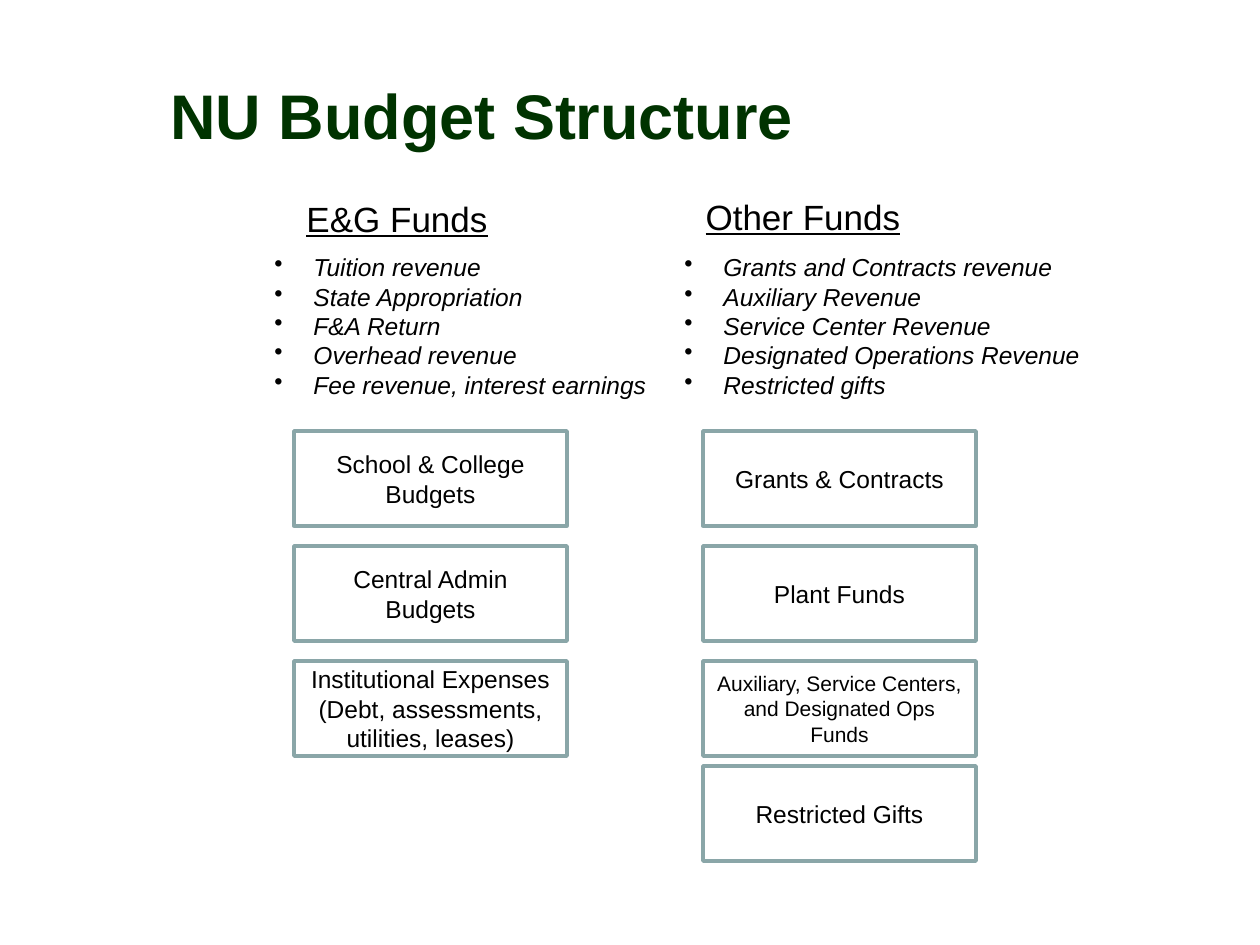
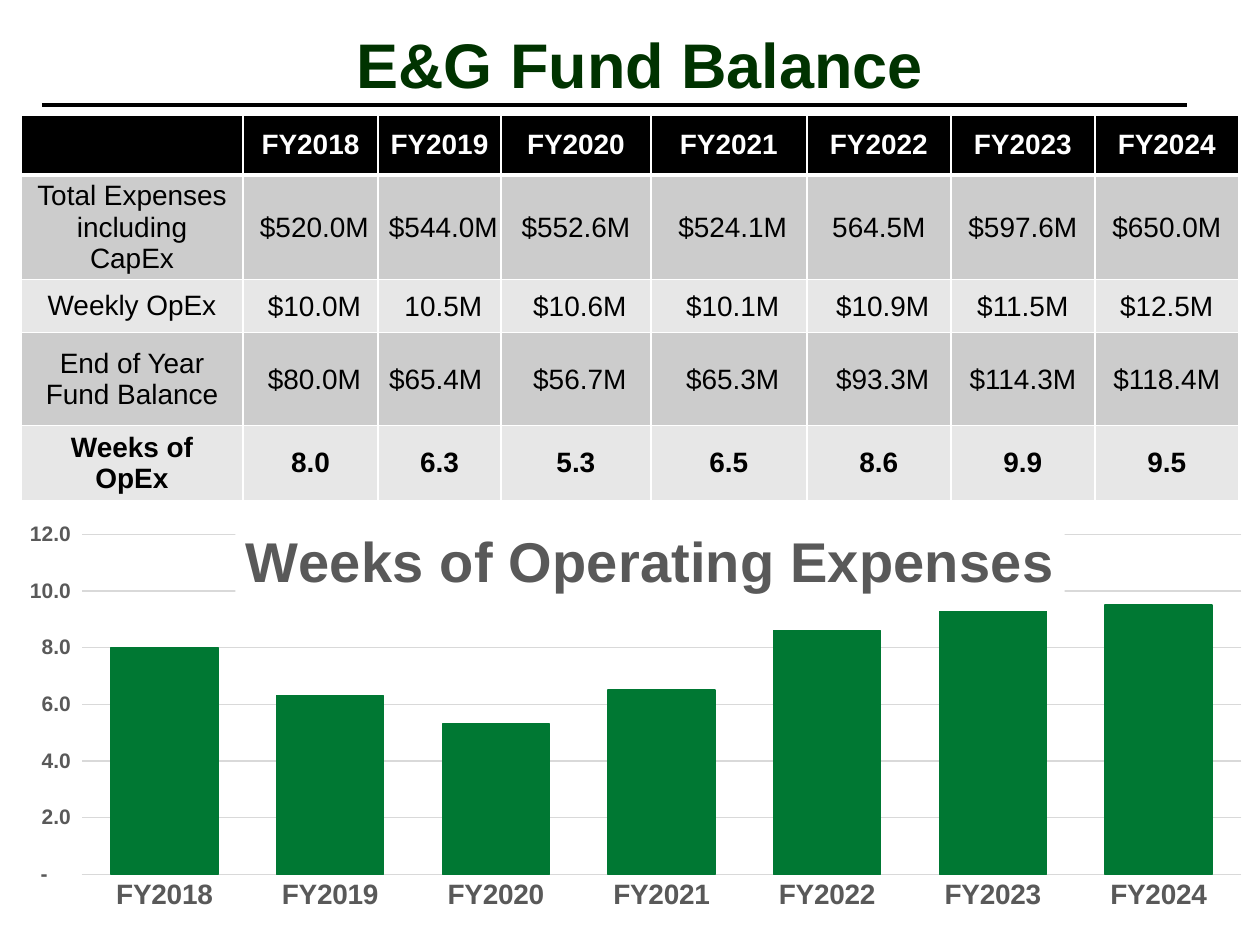
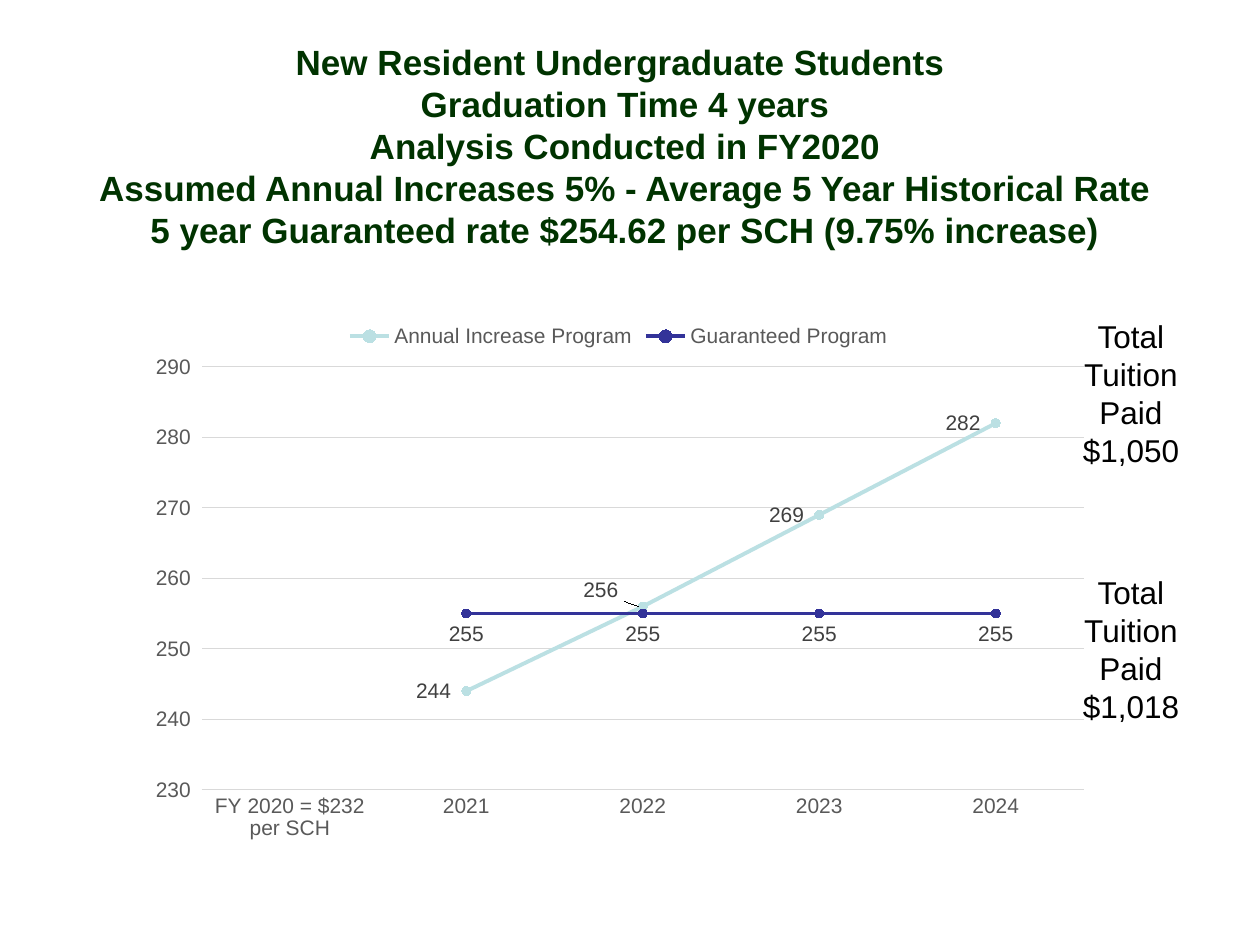
import lxml.etree
import pptx
import pptx.chart.data
import pptx.dml.color
import pptx.enum.chart
import pptx.enum.shapes
import pptx.enum.text
import pptx.oxml.ns
import pptx.util

FONT = "Arial"
BLACK, WHITE, GREEN, BOX_EDGE = "000000", "FFFFFF", "003300", "8AA6A8"
AXIS_TEXT, GRID, BAR, LABEL_TEXT = "595959", "D9D9D9", "007833", "404040"
CENTER = pptx.enum.text.PP_ALIGN.CENTER
LEFT = pptx.enum.text.PP_ALIGN.LEFT
MIDDLE = pptx.enum.text.MSO_ANCHOR.MIDDLE
LABEL_POSITION = pptx.enum.chart.XL_LABEL_POSITION

FUND_GROUPS = [
    {"name": "E&G Funds", "name_at": (293, 191, 208, 55), "sources_at": (262, 246, 399, 161),
     "sources": ["Tuition revenue", "State Appropriation", "F&A Return", "Overhead revenue",
                 "Fee revenue, interest earnings"],
     "left": 294,
     "budgets": [(["School & College Budgets"], 14), (["Central Admin", "Budgets"], 14),
                 (["Institutional Expenses", "(Debt, assessments, utilities, leases)"], 14)]},
    {"name": "Other Funds", "name_at": (692, 189, 222, 55), "sources_at": (672, 246, 423, 161),
     "sources": ["Grants and Contracts revenue", "Auxiliary Revenue", "Service Center Revenue",
                 "Designated Operations Revenue", "Restricted gifts"],
     "left": 703,
     "budgets": [(["Grants & Contracts"], 14), (["Plant Funds"], 14),
                 (["Auxiliary, Service Centers, and Designated Ops Funds"], 12),
                 (["Restricted Gifts"], 14)]},
]
BUDGET_TOPS = (431, 546, 661, 766)
BUDGET_SIZE = (273, 95)

YEARS = ["FY2018", "FY2019", "FY2020", "FY2021", "FY2022", "FY2023", "FY2024"]
WEEKS = [8.0, 6.3, 5.3, 6.5, 8.6, 9.9, 9.5]
BALANCE_ROWS = [
    [""] + YEARS,
    ["Total Expenses\nincluding CapEx", " $520.0M", " $544.0M ", " $552.6M ", " $524.1M",
     " 564.5M ", "$597.6M", "$650.0M"],
    ["Weekly OpEx", " $10.0M", " 10.5M", " $10.6M", " $10.1M", " $10.9M", "$11.5M", "$12.5M"],
    ["End of Year Fund Balance", " $80.0M", "$65.4M ", " $56.7M", " $65.3M", " $93.3M",
     "$114.3M", "$118.4M"],
    ["Weeks of OpEx"] + [f"{weeks:.1f}" for weeks in WEEKS],
]
ROW_FILLS = [BLACK, "CCCCCC", "E7E7E7", "CCCCCC", "E7E7E7"]
COLUMN_WIDTHS = (222, 135, 123, 150, 156, 144, 144, 144)
ROW_HEIGHTS = (60, 104, 53, 93, 75)
WEEKS_FORMAT = '_(* #,##0.0_);_(* \\(#,##0.0\\);_(* "-"??_);_(@_)'

TUITION_TITLE = [
    "New Resident Undergraduate Students ",
    "Graduation Time 4 years",
    "Analysis Conducted in FY2020",
    "Assumed Annual Increases 5% - Average 5 Year Historical Rate",
    "5 year Guaranteed rate $254.62 per SCH (9.75% increase)",
]
TUITION_YEARS = ["FY 2020 = $232 per SCH", "2021", "2022", "2023", "2024"]
PROGRAMS = [
    ("Annual Increase Program", [None, 244, 256, 269, 282], "BBE0E3", LABEL_POSITION.LEFT),
    ("Guaranteed Program", [None, 255, 255, 255, 255], "333399", LABEL_POSITION.BELOW),
]
TUITION_FORMAT = '_(* #,##0_);_(* \\(#,##0\\);_(* "-"_);_(@_)'
TOTALS = [("$1,050", 311), ("$1,018", 567)]
LABEL_EXTENSION = "{CE6537A1-D6FC-4f65-9D91-7224C49458BB}"
LABEL_NAMESPACE = "http://schemas.microsoft.com/office/drawing/2012/chart"


def px(length):
    return pptx.util.Emu(round(length * 914400 / 126))


def box(at):
    return [px(length) for length in at]


def rgb(value):
    return pptx.dml.color.RGBColor.from_string(value)


def add_xml(parent, tag, **attributes):
    return lxml.etree.SubElement(parent, pptx.oxml.ns.qn(tag), attributes)


def set_font(font, size, color, bold=False):
    font.name = FONT
    font.size = pptx.util.Pt(size)
    font.bold = bold
    font.color.rgb = rgb(color)


def set_line(line, color, width):
    line.color.rgb = rgb(color)
    line.width = pptx.util.Pt(width)


def write(frame, lines, size, color=BLACK, bold=False, align=CENTER):
    frame.text = "\n".join(lines)
    for paragraph in frame.paragraphs:
        paragraph.alignment = align
        set_font(paragraph.font, size, color, bold)


def add_text(slide, at, lines, size, wrap=True, **style):
    frame = slide.shapes.add_textbox(*box(at)).text_frame
    write(frame, lines, size, **style)
    frame.word_wrap = wrap
    frame.auto_size = pptx.enum.text.MSO_AUTO_SIZE.SHAPE_TO_FIT_TEXT
    return frame


def add_title(slide, at, lines, size=36, align=CENTER):
    frame = add_text(slide, at, lines, size, color=GREEN, bold=True, align=align)
    frame.auto_size = pptx.enum.text.MSO_AUTO_SIZE.NONE
    frame.vertical_anchor = MIDDLE


def add_sources(slide, at, sources):
    frame = add_text(slide, at, sources, 14, wrap=False, align=LEFT)
    for paragraph in frame.paragraphs:
        paragraph.font.italic = True
        properties = paragraph._p.get_or_add_pPr()
        properties.set("marL", str(px(39)))
        properties.set("indent", str(-px(39)))
        bullet = lxml.etree.Element(pptx.oxml.ns.qn("a:buChar"), char="•")
        properties.insert(0, bullet)


def add_budget(slide, at, lines, size):
    budget = slide.shapes.add_shape(pptx.enum.shapes.MSO_SHAPE.RECTANGLE, *box(at))
    budget.shadow.inherit = False
    budget.fill.background()
    set_line(budget.line, BOX_EDGE, 2)
    write(budget.text_frame, lines, size)
    budget.text_frame.word_wrap = True
    budget.text_frame.vertical_anchor = MIDDLE


def set_borders(cell, bottom):
    properties = cell._tc.get_or_add_tcPr()
    for tag, width in (("a:lnL", 1), ("a:lnR", 1), ("a:lnT", 1), ("a:lnB", bottom)):
        border = add_xml(properties, tag, w=str(pptx.util.Pt(width)))
        add_xml(add_xml(border, "a:solidFill"), "a:srgbClr", val=WHITE)


def add_balance_table(slide):
    at = (21, 115, sum(COLUMN_WIDTHS), sum(ROW_HEIGHTS))
    table = slide.shapes.add_table(len(BALANCE_ROWS), len(COLUMN_WIDTHS), *box(at)).table
    for column, width in zip(table.columns, COLUMN_WIDTHS):
        column.width = px(width)
    last = len(BALANCE_ROWS) - 1
    for r, texts in enumerate(BALANCE_ROWS):
        table.rows[r].height = px(ROW_HEIGHTS[r])
        for c, text in enumerate(texts):
            cell = table.cell(r, c)
            write(cell.text_frame, text.split("\n"), 16,
                  color=BLACK if r else WHITE, bold=r in (0, last))
            cell.vertical_anchor = MIDDLE
            if c == 0:
                cell.margin_top = cell.margin_bottom = px(2)
            elif 0 < r < last:
                cell.margin_left = cell.margin_right = cell.margin_top = px(1)
                cell.margin_bottom = 0
            set_borders(cell, bottom=1 if r else 3)
            cell.fill.solid()
            cell.fill.fore_color.rgb = rgb(ROW_FILLS[r])


def set_layout(parent, index, modes, **fractions):
    for old in parent.findall(pptx.oxml.ns.qn("c:layout")):
        parent.remove(old)
    layout = lxml.etree.Element(pptx.oxml.ns.qn("c:layout"))
    manual = add_xml(layout, "c:manualLayout")
    for tag, value in (modes | fractions).items():
        add_xml(manual, f"c:{tag}", val=str(value))
    parent.insert(index, layout)


def hide_leader_lines(labels):
    extension = add_xml(add_xml(labels, "c:extLst"), "c:ext", uri=LABEL_EXTENSION)
    lxml.etree.SubElement(extension, f"{{{LABEL_NAMESPACE}}}showLeaderLines",
                          {"val": "0"}, nsmap={"c15": LABEL_NAMESPACE})


EDGES = {"xMode": "edge", "yMode": "edge"}


def add_chart(slide, kind, at, categories, series, value_range, number_format, category_size, plot):
    data = pptx.chart.data.CategoryChartData()
    data.categories = categories
    for name, values in series:
        data.add_series(name, values)
    chart = slide.shapes.add_chart(kind, *box(at), data).chart
    set_font(chart.font, 10, BLACK)
    chart.has_title = chart.has_legend = False
    category_axis, value_axis = chart.category_axis, chart.value_axis
    for axis, size in ((category_axis, category_size), (value_axis, 12)):
        axis.major_tick_mark = axis.minor_tick_mark = pptx.enum.chart.XL_TICK_MARK.NONE
        set_font(axis.tick_labels.font, size, AXIS_TEXT)
    set_line(category_axis.format.line, GRID, 0.75)
    value_axis.format.line.fill.background()
    set_line(value_axis.major_gridlines.format.line, GRID, 0.75)
    value_axis.minimum_scale, value_axis.maximum_scale, value_axis.major_unit = value_range
    value_axis.tick_labels.number_format = number_format
    value_axis.tick_labels.number_format_is_linked = False
    chart.plots[0].vary_by_categories = False
    plot_area = chart._chartSpace.chart.plotArea
    set_layout(plot_area, 0, {"layoutTarget": "inner"} | EDGES, **plot)
    return chart


def add_weeks_chart(slide):
    name = "Weeks of Operating Expenses"
    chart = add_chart(slide, pptx.enum.chart.XL_CHART_TYPE.COLUMN_CLUSTERED, (21, 486, 1239, 455),
                      YEARS, [(name, WEEKS)], (0, 12, 2), WEEKS_FORMAT, 16,
                      {"x": 0.049, "y": 0.106, "w": 0.936, "h": 0.748})
    for axis in (chart.category_axis, chart.value_axis):
        axis.tick_labels.font.bold = True
    chart.has_title = True
    title = chart.chart_title
    write(title.text_frame, [name], 32, color=AXIS_TEXT, bold=True)
    title.format.fill.solid()
    title.format.fill.fore_color.rgb = rgb(WHITE)
    set_layout(title._element, 1, EDGES, x=0.173, y=0.062)
    columns = chart.plots[0]
    columns.gap_width, columns.overlap = 55, 100
    weeks = columns.series[0]
    weeks.format.fill.solid()
    weeks.format.fill.fore_color.rgb = rgb(BAR)
    set_line(weeks.format.line, BAR, 0.75)


def add_tuition_chart(slide):
    chart = add_chart(slide, pptx.enum.chart.XL_CHART_TYPE.LINE_MARKERS, (150, 311, 935, 548),
                      TUITION_YEARS, [program[:2] for program in PROGRAMS], (230, 290, 10),
                      TUITION_FORMAT, 12, {"x": 0.053, "y": 0.102, "w": 0.946, "h": 0.772})
    chart.has_legend = True
    chart.legend.position = pptx.enum.chart.XL_LEGEND_POSITION.TOP
    chart.legend.include_in_layout = False
    set_font(chart.legend.font, 12, AXIS_TEXT)
    for program, (_, _, color, position) in zip(chart.plots[0].series, PROGRAMS):
        program.smooth = False
        set_line(program.format.line, color, 2.25)
        marker = program.marker
        marker.style = pptx.enum.chart.XL_MARKER_STYLE.CIRCLE
        marker.size = 5
        marker.format.fill.solid()
        marker.format.fill.fore_color.rgb = rgb(color)
        set_line(marker.format.line, color, 0.75)
        labels = program.data_labels
        labels.show_value = True
        labels.position = position
        labels.number_format = TUITION_FORMAT
        labels.number_format_is_linked = False
        set_font(labels.font, 12, LABEL_TEXT)
    annual = chart.plots[0].series[0]
    crossing = annual.points[2].data_label
    set_font(crossing.font, 12, LABEL_TEXT)
    crossing.position = LABEL_POSITION.LEFT
    label = annual._element.find(".//" + pptx.oxml.ns.qn("c:dLbl"))
    set_layout(label, 1, {}, x=-0.01, y=-0.03)
    hide_leader_lines(label.getparent())


def build_structure(slide):
    add_title(slide, (158, 58, 966, 112), ["NU Budget Structure"], align=LEFT)
    for group in FUND_GROUPS:
        heading = add_text(slide, group["name_at"], [group["name"]], 20, wrap=False)
        heading.paragraphs[0].font.underline = True
        add_sources(slide, group["sources_at"], group["sources"])
        for (lines, size), top in zip(group["budgets"], BUDGET_TOPS):
            add_budget(slide, (group["left"], top, *BUDGET_SIZE), lines, size)


def build_balance(slide):
    add_title(slide, (73, 21, 1134, 84), ["E&G Fund Balance"])
    add_balance_table(slide)
    add_weeks_chart(slide)
    rule = slide.shapes.add_connector(pptx.enum.shapes.MSO_CONNECTOR.STRAIGHT,
                                      *box((42, 105, 1187, 105)))
    set_line(rule.line, BLACK, 2.25)
    add_xml(rule._element.spPr, "a:effectLst")


def build_tuition(slide):
    add_title(slide, (42, 53, 1166, 185), TUITION_TITLE, size=20)
    add_tuition_chart(slide)
    for total, top in TOTALS:
        add_text(slide, (1042, top, 178, 165), ["Total Tuition", "Paid", total], 18)


def main():
    deck = pptx.Presentation()
    deck.slide_width, deck.slide_height = px(1260), px(945)
    for build in (build_structure, build_balance, build_tuition):
        build(deck.slides.add_slide(deck.slide_layouts[6]))
    deck.save("out.pptx")


if __name__ == "__main__":
    main()
